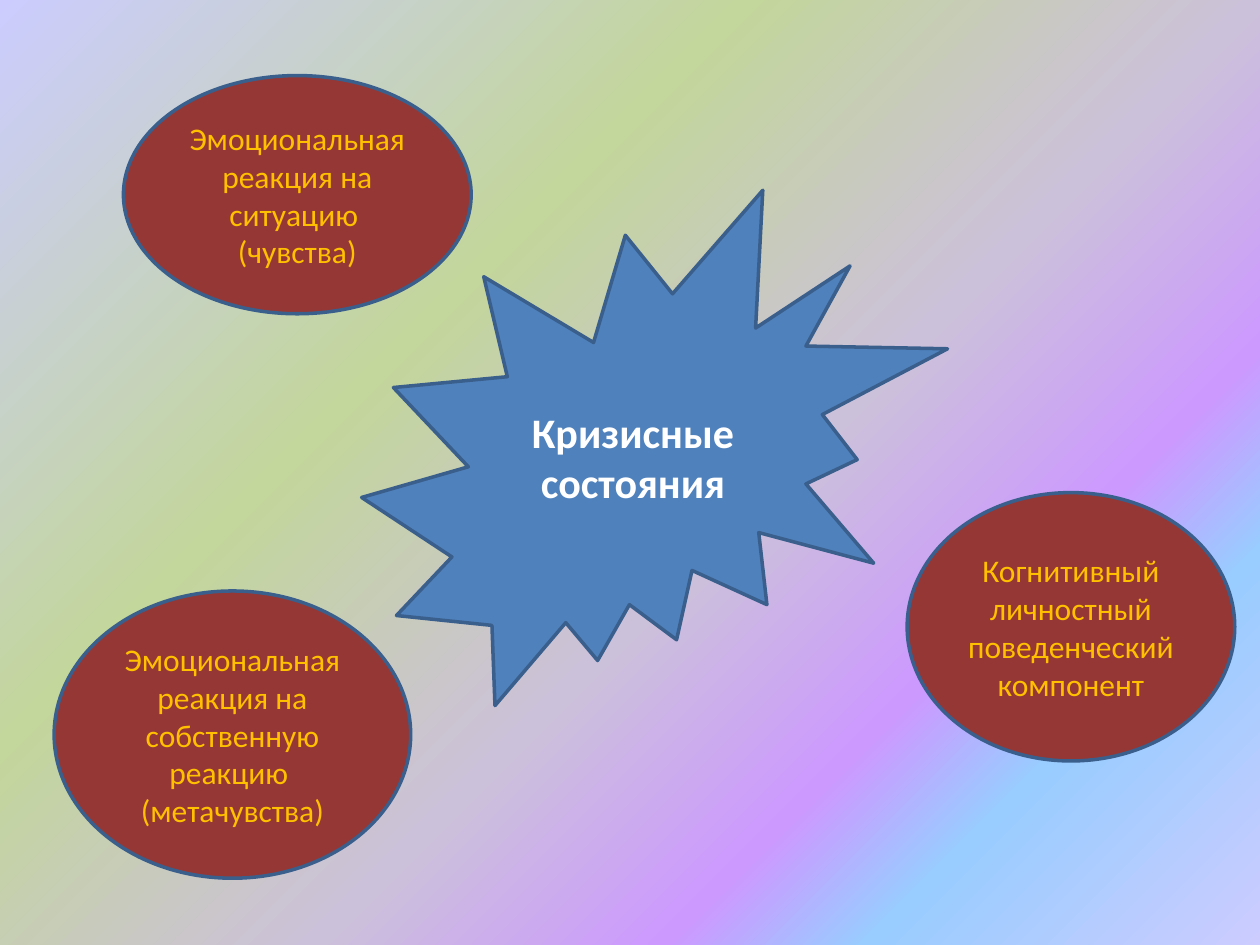
from lxml import etree
from pptx import Presentation
from pptx.dml.color import RGBColor
from pptx.enum.shapes import MSO_SHAPE
from pptx.enum.text import MSO_ANCHOR, PP_ALIGN
from pptx.oxml.ns import qn
from pptx.util import Pt

BURST, OVAL = MSO_SHAPE.EXPLOSION2, MSO_SHAPE.OVAL
MIDDLE, CENTER = MSO_ANCHOR.MIDDLE, PP_ALIGN.CENTER
SCALE = 9144
FONT = "Calibri"
COLORS = {
    "burst": "4F81BD",
    "oval": "953735",
    "outline": "3A5F8C",
    "title": "FFFFFF",
    "label": "FFC000",
}
GRADIENT = [
    (0, "CCCCFF"), (34, "C3D69B"), (57, "CCC1DA"),
    (73, "CC99FF"), (82, "99CCFF"), (100, "CCCCFF"),
]
COMPONENTS = [
    ((98, 60, 276, 189), ["Эмоциональная реакция на ситуацию ", "(чувства)"]),
    ((720, 391, 260, 213), ["Когнитивный личностный поведенческий компонент"]),
    ((43, 469, 283, 228), ["Эмоциональная реакция на собственную реакцию ", "(метачувства)"]),
]


def paint_background(page):
    """Fill the page with a diagonal gradient of several stops."""
    fill = page.background.fill
    fill.gradient()
    fill.gradient_angle = 315
    stops = next(page.background._cSld.iter(qn("a:gsLst")))
    for stop in list(stops):
        stops.remove(stop)
    for percent, color in GRADIENT:
        stop = etree.SubElement(stops, qn("a:gs"), pos=str(percent * 1000))
        etree.SubElement(stop, qn("a:srgbClr"), val=color)


def add_figure(page, kind, box, fill, lines, size, color, bold=False):
    """Draw an outlined shape in the box with centred paragraphs inside."""
    figure = page.shapes.add_shape(kind, *(length * SCALE for length in box))
    figure.shadow.inherit = False
    figure.fill.solid()
    figure.fill.fore_color.rgb = RGBColor.from_string(COLORS[fill])
    figure.line.color.rgb = RGBColor.from_string(COLORS["outline"])
    figure.line.width = Pt(2)
    frame = figure.text_frame
    frame.word_wrap = True
    frame.vertical_anchor = MIDDLE
    for index, line in enumerate(lines):
        para = frame.add_paragraph() if index else frame.paragraphs[0]
        para.alignment = CENTER
        span = para.add_run()
        span.text = line
        span.font.name = FONT
        span.font.size = Pt(size)
        span.font.bold = bold
        span.font.color.rgb = RGBColor.from_string(COLORS[color])


def build_crisis_page(deck):
    """Place the central burst and the ovals of its components."""
    page = deck.slides.add_slide(deck.slide_layouts[6])
    paint_background(page)
    add_figure(page, BURST, (287, 151, 465, 409), "burst",
               ["Кризисные состояния"], 24, "title", bold=True)
    for box, lines in COMPONENTS:
        add_figure(page, OVAL, box, "oval", lines, 18, "label")


def main():
    """Build the deck and save it."""
    deck = Presentation()
    deck.slide_width, deck.slide_height = 1000 * SCALE, 750 * SCALE
    build_crisis_page(deck)
    deck.save("out.pptx")


if __name__ == "__main__":
    main()
